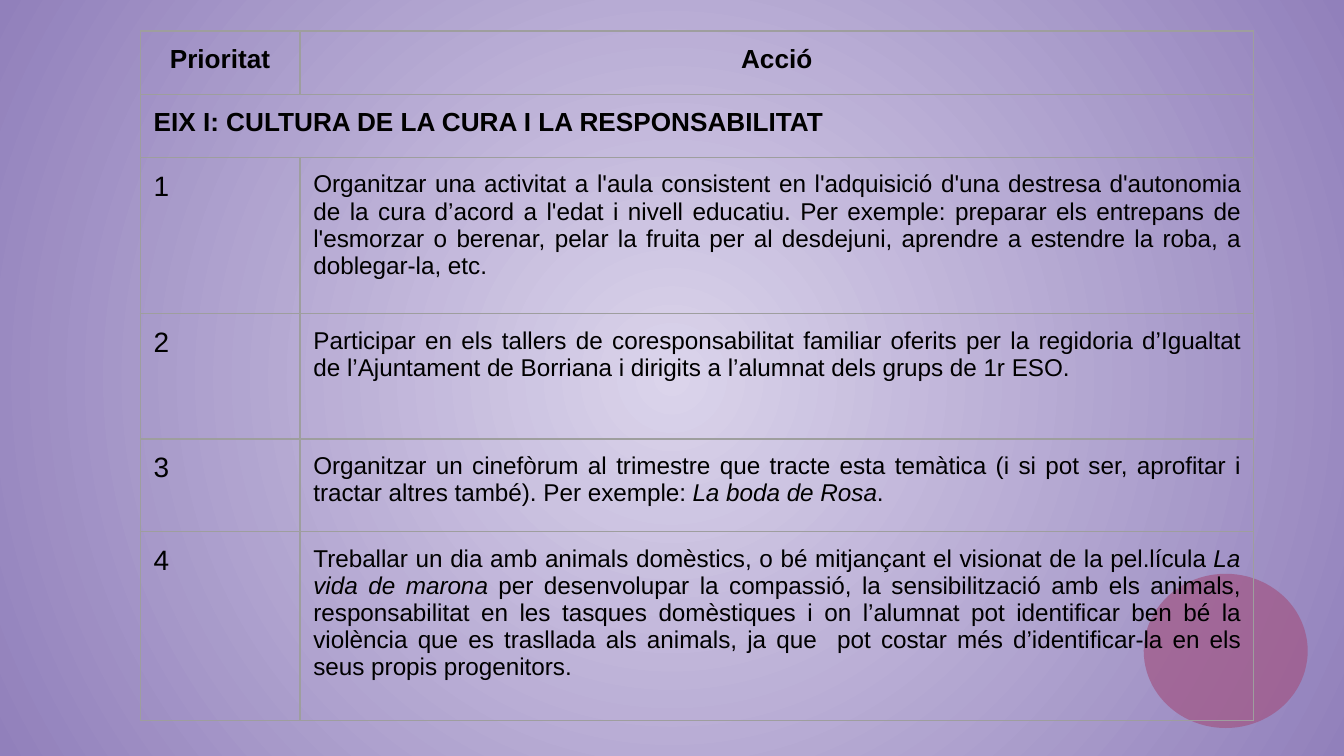
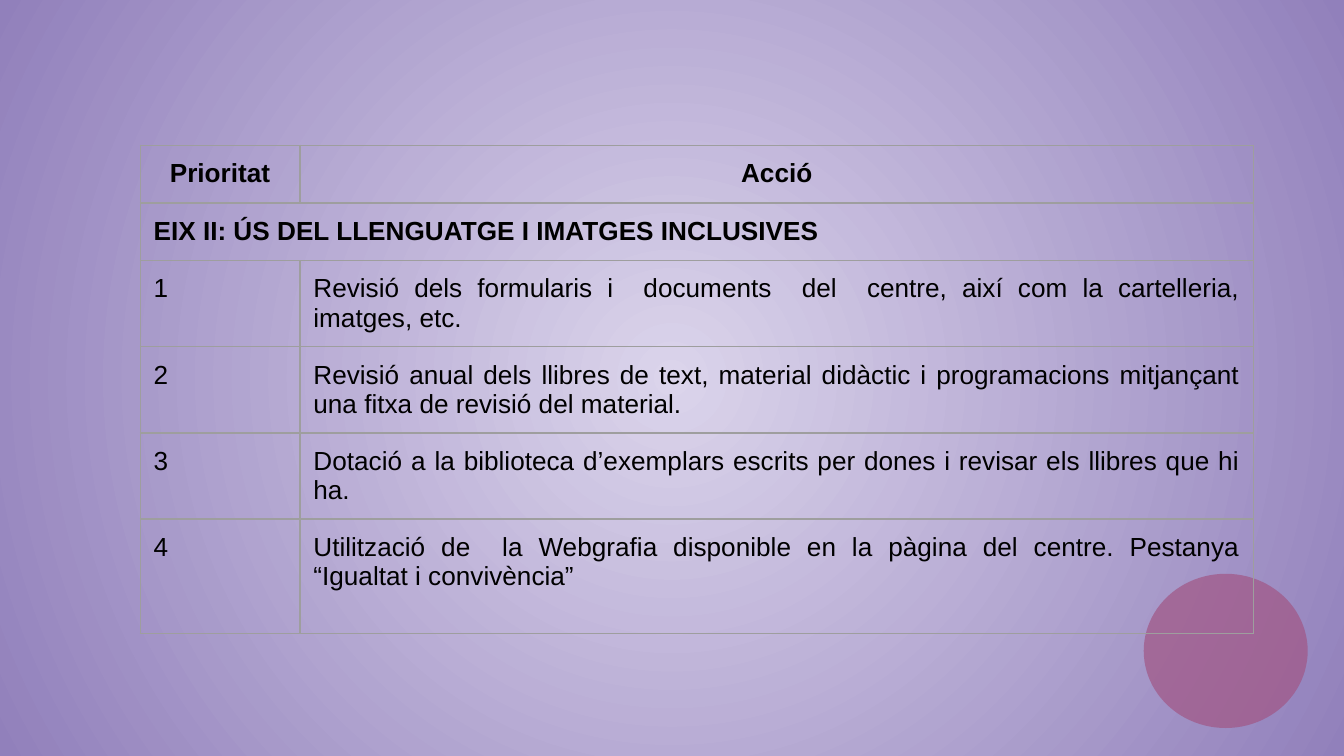
from lxml import etree
from pptx import Presentation
from pptx.dml.color import RGBColor
from pptx.enum.shapes import MSO_SHAPE
from pptx.enum.text import MSO_ANCHOR, PP_ALIGN
from pptx.oxml.ns import qn
from pptx.util import Inches, Pt

ELLIPSE = MSO_SHAPE.OVAL
TOP = MSO_ANCHOR.TOP
LEFT, CENTER, JUSTIFY = PP_ALIGN.LEFT, PP_ALIGN.CENTER, PP_ALIGN.JUSTIFY

LAVENDER = RGBColor(0xDB, 0xD4, 0xEB)
PURPLE = RGBColor(0x91, 0x80, 0xBB)
PLUM = RGBColor(0xA1, 0x58, 0x87)
GREY = RGBColor(0x9E, 0x9E, 0x9E)
BLACK = RGBColor(0, 0, 0)

SLIDE_WIDTH = Inches(10)
SLIDE_HEIGHT = SLIDE_WIDTH * 9 // 16
CIRCLE_BOX = (85.1, 75.9, 12.2, 20.4)
CIRCLE_OPACITY = 73
COLUMN_WEIGHTS = (119, 710)
CELL_INSET = Inches(0.1)
BORDER_WIDTH = Pt(0.75)
BORDER_SIDES = ("a:lnL", "a:lnR", "a:lnT", "a:lnB")
FONT = {"name": "Arial", "bold": False, "italic": False}
HEADING_SIZE = 14
HEADINGS = ("Prioritat", "Acció")

AXES = (
    {
        "box": (10.43, 4.1, 82.85, 91.2),
        "row_weights": (47, 47, 116, 93, 69, 140),
        "sizes": (15, 13),
        "title": "EIX I: CULTURA DE LA CURA I LA RESPONSABILITAT",
        "actions": (
            ("Organitzar una activitat a l'aula consistent en l'adquisició d'una destresa "
             "d'autonomia de la cura d’acord a l'edat i nivell educatiu. Per exemple: preparar "
             "els entrepans de l'esmorzar o berenar, pelar la fruita per al desdejuni, aprendre "
             "a estendre la roba, a doblegar-la, etc. ",),
            ("Participar en els tallers de coresponsabilitat familiar oferits per la regidoria "
             "d’Igualtat de l’Ajuntament de Borriana i dirigits a l’alumnat dels grups de 1r ESO.",),
            ("Organitzar un cinefòrum al trimestre que tracte esta temàtica (i si pot ser, "
             "aprofitar i tractar altres també). Per exemple: ",
             "La boda de Rosa", "."),
            ("Treballar un dia amb animals domèstics, o bé mitjançant el visionat de la pel.lícula ",
             "La vida de marona",
             " per desenvolupar la compassió, la sensibilització amb els animals, responsabilitat "
             "en les tasques domèstiques i on l’alumnat pot identificar ben bé la violència que es "
             "trasllada als animals, ja que  pot costar més d’identificar-la en els seus propis "
             "progenitors."),
        ),
    },
    {
        "box": (10.43, 19.2, 82.85, 64.6),
        "row_weights": (43, 43, 64, 64, 64, 85),
        "sizes": (14, 14),
        "title": "EIX II: ÚS DEL LLENGUATGE I IMATGES INCLUSIVES",
        "actions": (
            ("Revisió dels formularis i  documents  del  centre, així com la cartelleria, "
             "imatges, etc.",),
            ("Revisió anual dels llibres de text, material didàctic i programacions mitjançant "
             "una fitxa de revisió del material. ",),
            ("Dotació a la biblioteca d’exemplars escrits per dones i revisar els llibres que "
             "hi ha. ",),
            ("Utilització de  la Webgrafia disponible en la pàgina del centre. Pestanya "
             "“Igualtat i convivència”",),
        ),
    },
)


def set_attributes(target, values):
    for name, value in values.items():
        setattr(target, name, value)


def place(box):
    extents = (SLIDE_WIDTH, SLIDE_HEIGHT) * 2
    return [round(extent * share / 100) for extent, share in zip(extents, box)]


def share_out(total, weights):
    return [round(total * weight / sum(weights)) for weight in weights]


def paint_background(slide):
    fill = slide.background.fill
    fill.gradient()
    for stop, color, position in zip(fill.gradient_stops, (LAVENDER, PURPLE), (0, 1)):
        stop.color.rgb = color
        stop.position = position
    gradient = slide.element.find(".//" + qn("a:gradFill"))
    gradient.remove(gradient.find(qn("a:lin")))
    radial = etree.SubElement(gradient, qn("a:path"), path="circle")
    etree.SubElement(radial, qn("a:fillToRect"), dict.fromkeys("ltrb", "50000"))


def add_circle(slide, box):
    circle = slide.shapes.add_shape(ELLIPSE, *place(box))
    circle.shadow.inherit = False
    circle.fill.solid()
    circle.fill.fore_color.rgb = PLUM
    circle.line.fill.background()
    color = circle.element.spPr.find(".//" + qn("a:srgbClr"))
    etree.SubElement(color, qn("a:alpha"), val=str(CIRCLE_OPACITY * 1000))


def style_cell(cell):
    set_attributes(cell, {
        "margin_left": CELL_INSET, "margin_right": CELL_INSET,
        "margin_top": CELL_INSET, "margin_bottom": CELL_INSET,
        "vertical_anchor": TOP,
    })
    properties = cell._tc.get_or_add_tcPr()
    for side in BORDER_SIDES:
        border = etree.SubElement(properties, qn(side), w=str(BORDER_WIDTH))
        solid = etree.SubElement(border, qn("a:solidFill"))
        etree.SubElement(solid, qn("a:srgbClr"), val=str(GREY))
    cell.fill.background()


def write_cell(cell, texts, size, alignment, bold=False):
    paragraph = cell.text_frame.paragraphs[0]
    paragraph.alignment = alignment
    for index, text in enumerate(texts):
        run = paragraph.add_run()
        run.text = text
        italic = index % 2 == 1
        set_attributes(run.font, {**FONT, "size": Pt(size), "bold": bold, "italic": italic})
        run.font.color.rgb = BLACK


def add_action_table(slide, axis):
    left, top, width, height = place(axis["box"])
    row_heights = share_out(height, axis["row_weights"])
    column_widths = share_out(width, COLUMN_WEIGHTS)
    table = slide.shapes.add_table(
        len(row_heights), len(column_widths), left, top, width, height).table
    set_attributes(table, {"first_row": False, "horz_banding": False})
    for column, column_width in zip(table.columns, column_widths):
        column.width = column_width
    for row, row_height in zip(table.rows, row_heights):
        row.height = row_height
    for cell in table.iter_cells():
        style_cell(cell)

    for index, heading in enumerate(HEADINGS):
        write_cell(table.cell(0, index), [heading], HEADING_SIZE, CENTER, bold=True)
    table.cell(1, 0).merge(table.cell(1, 1))
    write_cell(table.cell(1, 0), [axis["title"]], HEADING_SIZE, LEFT, bold=True)
    number_size, action_size = axis["sizes"]
    for number, action in enumerate(axis["actions"], start=1):
        write_cell(table.cell(number + 1, 0), [str(number)], number_size, LEFT)
        write_cell(table.cell(number + 1, 1), action, action_size, JUSTIFY)


def add_axis_slide(presentation, axis):
    slide = presentation.slides.add_slide(presentation.slide_layouts[6])
    paint_background(slide)
    add_circle(slide, CIRCLE_BOX)
    add_action_table(slide, axis)


def main():
    presentation = Presentation()
    set_attributes(presentation, {"slide_width": SLIDE_WIDTH, "slide_height": SLIDE_HEIGHT})
    for axis in AXES:
        add_axis_slide(presentation, axis)
    presentation.save("out.pptx")


if __name__ == "__main__":
    main()
